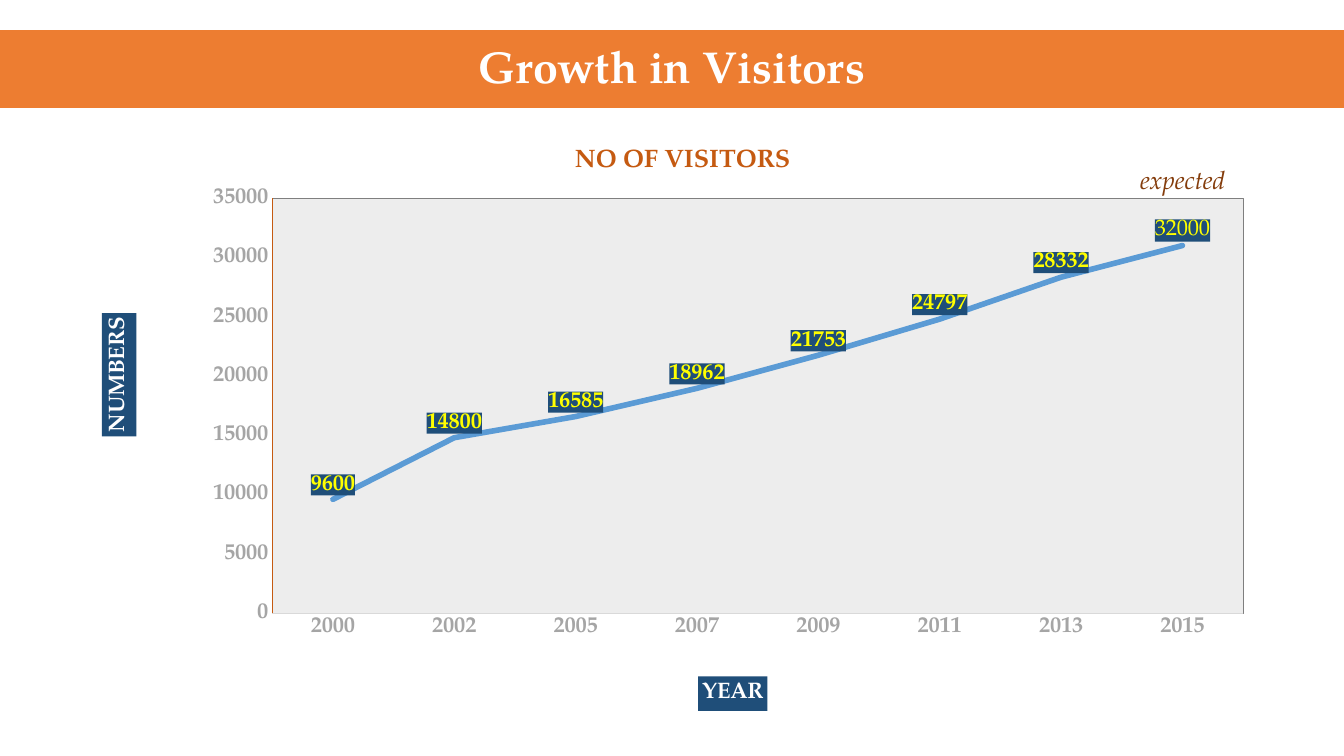
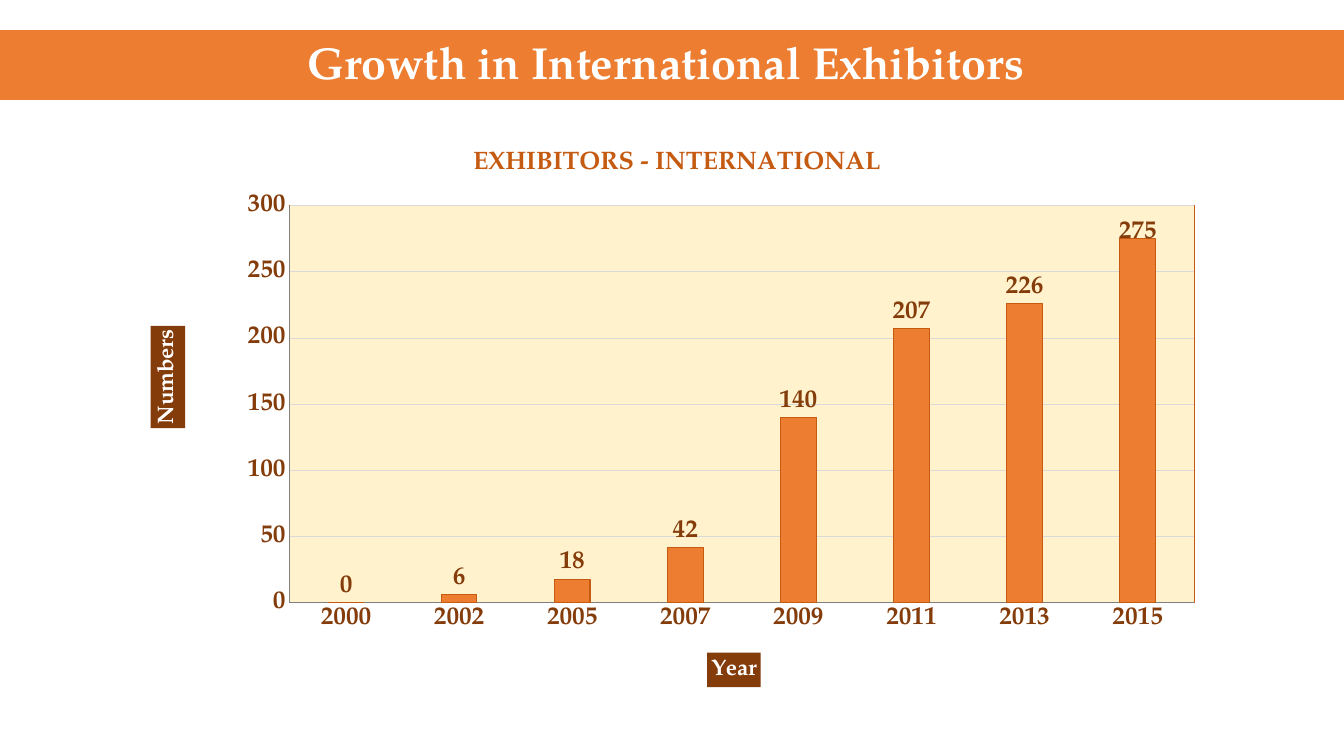
from lxml import etree
from pptx import Presentation
from pptx.chart.data import CategoryChartData
from pptx.dml.color import RGBColor
from pptx.enum.chart import XL_CHART_TYPE, XL_LABEL_POSITION, XL_MARKER_STYLE, XL_TICK_MARK
from pptx.enum.shapes import MSO_SHAPE
from pptx.enum.text import MSO_ANCHOR, PP_ALIGN
from pptx.oxml import parse_xml
from pptx.oxml.ns import nsdecls, qn
from pptx.util import Inches, Pt

LINE, COLUMN = XL_CHART_TYPE.LINE, XL_CHART_TYPE.COLUMN_CLUSTERED
ABOVE, OUTSIDE = XL_LABEL_POSITION.ABOVE, XL_LABEL_POSITION.OUTSIDE_END
NO_MARKER, NO_TICK = XL_MARKER_STYLE.NONE, XL_TICK_MARK.NONE
RECTANGLE, MIDDLE = MSO_SHAPE.RECTANGLE, MSO_ANCHOR.MIDDLE
CENTER, LEFT = PP_ALIGN.CENTER, PP_ALIGN.LEFT

FONT = "TeX Gyre Pagella"
COLORS = {
    "orange": "ED7D31", "rust": "C55A11", "brown": "843C0B", "cream": "FFF2CC",
    "blue": "5B9BD5", "navy": "1F4E79", "yellow": "FFFF00", "white": "FFFFFF",
    "pale": "EDEDED", "light": "D9D9D9", "gray": "A5A5A5", "dark": "7F7F7F",
}
YEARS = ["2000", "2002", "2005", "2007", "2009", "2011", "2013", "2015"]


def color(name):
    return RGBColor.from_string(COLORS[name])


def style_font(font, size, ink, bold=True, italic=False):
    font.name, font.size, font.bold, font.italic = FONT, Pt(size), bold, italic
    font.color.rgb = color(ink)


def write(text_frame, text, size, ink, bold=True, italic=False, align=CENTER, spacing=None):
    text_frame.text = text
    paragraph = text_frame.paragraphs[0]
    paragraph.alignment = align
    paragraph.line_spacing = spacing
    style_font(paragraph.runs[0].font, size, ink, bold, italic)


def style_line(line, name, width=0.75):
    line.color.rgb = color(name)
    line.width = Pt(width)


def box_properties(fill, border=None):
    """Fill and border for chart parts that have no format object."""
    outline = ""
    if border:
        outline = (f'<a:ln w="9525"><a:solidFill><a:srgbClr val="{COLORS[border]}"/>'
                   "</a:solidFill></a:ln>")
    return parse_xml(f'<c:spPr {nsdecls("c", "a")}><a:solidFill>'
                     f'<a:srgbClr val="{COLORS[fill]}"/></a:solidFill>{outline}</c:spPr>')


def set_layout(element, index, **values):
    """Place a chart part by fractions of the chart area."""
    for old in element.findall(qn("c:layout")):
        element.remove(old)
    layout = etree.Element(qn("c:layout"))
    manual = etree.SubElement(layout, qn("c:manualLayout"))
    for tag, value in values.items():
        etree.SubElement(manual, qn(f"c:{tag}")).set("val", str(value))
    element.insert(index, layout)


class Deck:
    def __init__(self):
        self.presentation = Presentation()
        self.presentation.slide_width = Inches(13.33)
        self.presentation.slide_height = Inches(7.5)
        self.slide = None

    def new_slide(self, title, band_height):
        self.slide = self.presentation.slides.add_slide(self.presentation.slide_layouts[6])
        band = self.slide.shapes.add_shape(
            RECTANGLE, 0, Inches(0.3), self.presentation.slide_width, Inches(band_height))
        band.shadow.inherit = False
        band.fill.solid()
        band.fill.fore_color.rgb = color("orange")
        band.line.fill.background()
        band.text_frame.word_wrap = True
        band.text_frame.vertical_anchor = MIDDLE
        write(band.text_frame, title, 32, "white", spacing=0.9)

    def note(self, text, left, top, width, height):
        box = self.slide.shapes.add_textbox(
            Inches(left), Inches(top), Inches(width), Inches(height))
        box.text_frame.word_wrap = True
        write(box.text_frame, text, 18, "brown", bold=False, italic=True, align=LEFT)

    def chart(self, kind, values, area, plot, plot_fill, plot_border):
        data = CategoryChartData()
        data.categories = YEARS
        data.add_series("Series 1", values)
        chart = self.slide.shapes.add_chart(kind, *map(Inches, area), data).chart
        chart.has_legend = False
        chart.font.name, chart.font.size = "Calibri", Pt(10)
        plot_area = chart.plots[0]._element.getparent()
        set_layout(plot_area, 0, layoutTarget="inner", xMode="edge", yMode="edge",
                   **dict(zip("xywh", plot)))
        plot_area.append(box_properties(plot_fill, plot_border))
        chart.plots[0].vary_by_categories = False
        return chart

    def chart_title(self, chart, text, x, y):
        chart.has_title = True
        write(chart.chart_title.text_frame, text, 18, "rust")
        set_layout(chart.chart_title._element, 1, xMode="edge", yMode="edge", x=x, y=y)

    def axis(self, axis, title, position, title_fill, size, ink, line, turned=False):
        axis.major_tick_mark = axis.minor_tick_mark = NO_TICK
        axis.has_major_gridlines = False
        style_font(axis.tick_labels.font, size, ink)
        style_line(axis.format.line, line)
        axis.has_title = True
        axis_title = axis.axis_title
        write(axis_title.text_frame, title, 16, "white")
        axis_title.format.fill.solid()
        axis_title.format.fill.fore_color.rgb = color(title_fill)
        body = axis_title._element.find(".//" + qn("a:bodyPr"))
        body.set("rot", "-5400000" if turned else "0")
        body.set("vert", "horz")
        set_layout(axis_title._element, 1, xMode="edge", yMode="edge",
                   x=position[0], y=position[1])

    def scale(self, axis, maximum, step):
        axis.minimum_scale, axis.maximum_scale, axis.major_unit = 0, maximum, step
        axis.tick_labels.number_format = "General"
        axis.tick_labels.number_format_is_linked = False

    def labels(self, series, position, size, ink):
        labels = series.data_labels
        labels.show_value = True
        labels.position = position
        style_font(labels.font, size, ink)
        return labels

    def save(self):
        self.presentation.save("out.pptx")


def visitors(deck):
    deck.new_slide("Growth in Visitors", 0.77)
    chart = deck.chart(LINE, [9600, 14800, 16585, 18962, 21753, 24797, 28332, 31000],
                       (0.8, 1.31, 11.73, 5.91), (0.162, 0.111, 0.821, 0.697),
                       "pale", "dark")
    deck.chart_title(chart, "NO OF VISITORS", 0.414, 0.017)
    deck.axis(chart.category_axis, "YEAR", (0.522, 0.914), "navy", 16, "gray", "light")
    deck.axis(chart.value_axis, "NUMBERS", (0.018, 0.304), "navy", 16, "gray", "rust",
              turned=True)
    deck.scale(chart.value_axis, 35000, 5000)

    # Line
    series = chart.plots[0].series[0]
    series.smooth = False
    series.marker.style = NO_MARKER
    style_line(series.format.line, "blue", 4)
    series._element.find(".//" + qn("a:ln")).set("cap", "rnd")

    # Boxed labels, the last one with its own text
    labels = deck.labels(series, ABOVE, 16, "yellow")
    labels._element.find(qn("c:txPr")).addprevious(box_properties("navy"))
    last_label = series.points[7].data_label
    write(last_label.text_frame, "32000", 16, "yellow", bold=False)
    last_label.position = ABOVE
    last_element = labels._element.find(qn("c:dLbl"))
    last_element.find(qn("c:tx")).addnext(box_properties("navy"))
    deck.note("expected", 11.21, 1.58, 1.16, 0.4)


def exhibitors(deck):
    deck.new_slide("Growth in International Exhibitors ", 0.69)
    chart = deck.chart(COLUMN, [0, 6, 18, 42, 140, 207, 226, 275],
                       (1.29, 1.25, 10.76, 5.73), (0.147, 0.138, 0.834, 0.688),
                       "cream", "rust")
    deck.chart_title(chart, "EXHIBITORS - INTERNATIONAL", 0.312, 0.031)
    deck.axis(chart.category_axis, "Year", (0.532, 0.912), "brown", 18, "brown", "dark")
    deck.axis(chart.value_axis, "Numbers", (0.019, 0.346), "brown", 18, "brown", "dark",
              turned=True)
    deck.scale(chart.value_axis, 300, 50)
    chart.value_axis.has_major_gridlines = True
    style_line(chart.value_axis.major_gridlines.format.line, "light")

    # Columns
    chart.plots[0].gap_width, chart.plots[0].overlap = 219, -27
    series = chart.plots[0].series[0]
    series.format.fill.solid()
    series.format.fill.fore_color.rgb = color("orange")
    style_line(series.format.line, "rust")

    # Labels, the last one moved down a little
    labels = deck.labels(series, OUTSIDE, 18, "brown")
    last_label = series.points[7].data_label
    style_font(last_label.font, 18, "brown")
    last_label.position = OUTSIDE
    set_layout(labels._element.find(qn("c:dLbl")), 1, x=0, y=0.017)


def main():
    deck = Deck()
    visitors(deck)
    exhibitors(deck)
    deck.save()


if __name__ == "__main__":
    main()
